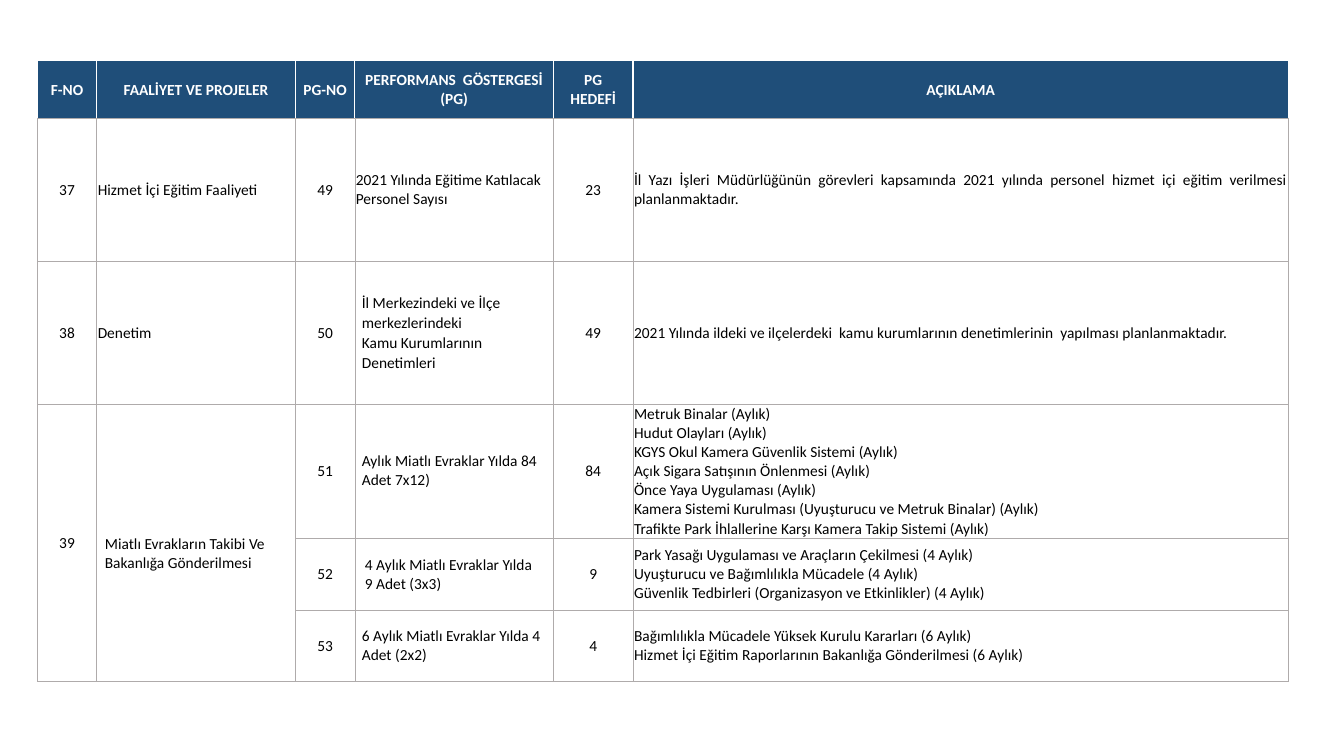
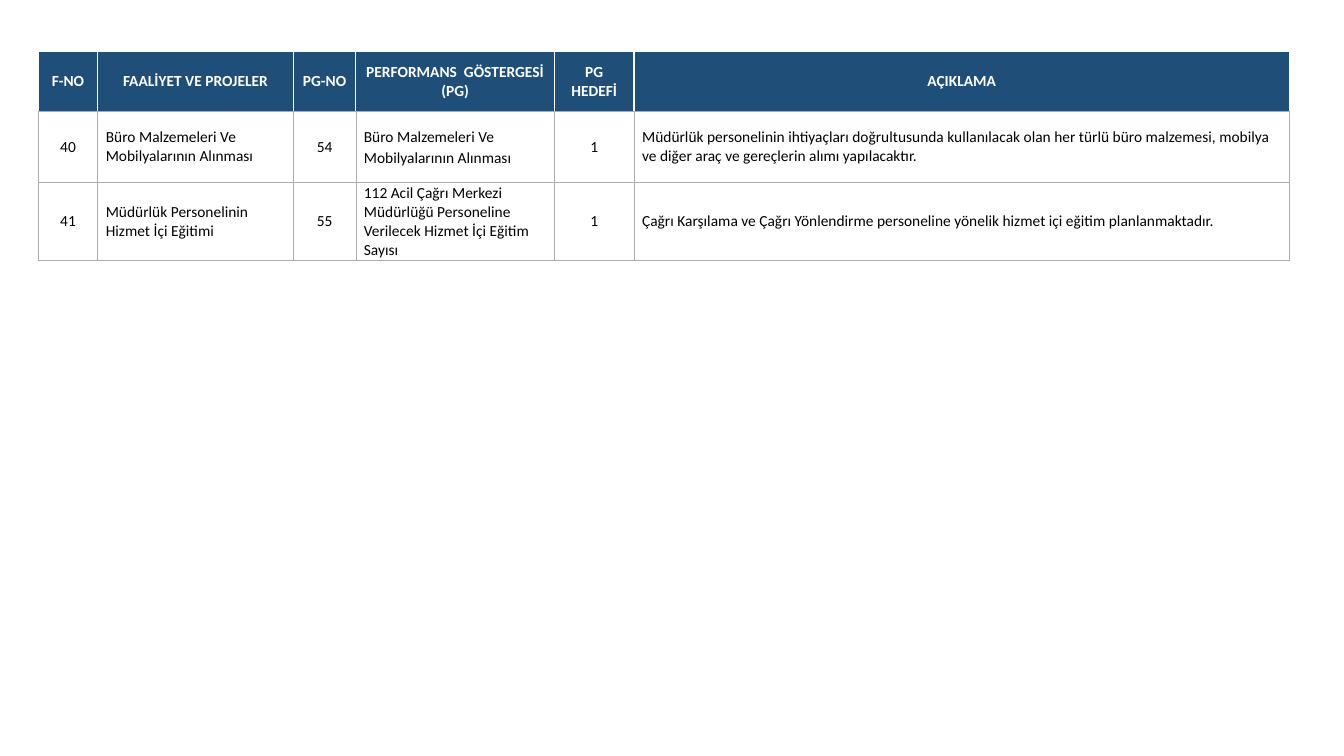
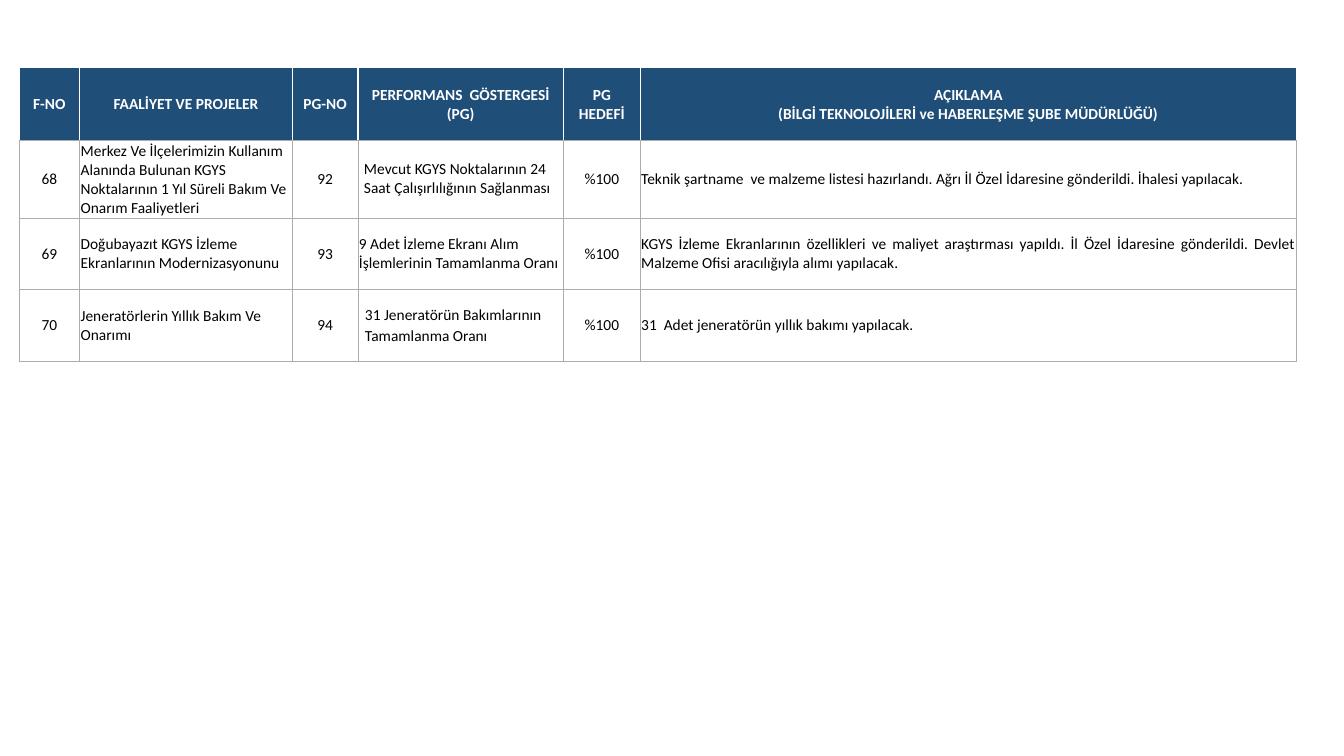
"""Build three slides of activity and performance indicator tables."""
import pptx
import pptx.dml.color
import pptx.enum.text
import pptx.util
from lxml import etree
from pptx.oxml.ns import qn

COLORS = {"header": "1F4E79", "white": "FFFFFF", "grid": "AFABAB", "text": "000000"}
FONT, SIZE = "Calibri", 11
ALIGN = {
    "c": pptx.enum.text.PP_ALIGN.CENTER,
    "l": pptx.enum.text.PP_ALIGN.LEFT,
    "j": pptx.enum.text.PP_ALIGN.JUSTIFY,
}
HEADINGS = ["F-NO", "FAALİYET VE PROJELER", "PG-NO", "PERFORMANS  GÖSTERGESİ (PG)",
            "PG\nHEDEFİ", "AÇIKLAMA"]
TIGHT = {"side": 0.01, "top": 0.01}
WIDE = {"side": 0.08}
INDENT = {"side": 0.07, "top": 0}

SLIDES = [
    {
        "at": (0.37, 0.6),
        "cols": [0.59, 1.97, 0.59, 1.97, 0.79, 6.5],
        "rows": [0.57, 1.42, 1.42, 1.33, 0.71, 0.71],
        "aligns": "clclcj",
        "merges": [(3, 0, 5, 0), (3, 1, 5, 1)],
        "body": [
            ["37", "Hizmet İçi Eğitim Faaliyeti", "49",
             "2021 Yılında Eğitime Katılacak Personel Sayısı", "23",
             "İl Yazı İşleri Müdürlüğünün görevleri kapsamında 2021 yılında personel "
             "hizmet içi eğitim verilmesi planlanmaktadır."],
            ["38", "Denetim", "50",
             ("İl Merkezindeki ve İlçe merkezlerindeki\nKamu Kurumlarının Denetimleri",
              {**INDENT, "spacing": 1.07}), "49",
             ("2021 Yılında ildeki ve ilçelerdeki  kamu kurumlarının denetimlerinin  "
              "yapılması planlanmaktadır.", {"spacing": 0.9})],
            ["39", ("Miatlı Evrakların Takibi Ve Bakanlığa Gönderilmesi",
                    {**WIDE, "top": 0.21}), "51",
             ("Aylık Miatlı Evraklar Yılda 84 Adet 7x12)", INDENT), "84",
             "Metruk Binalar (Aylık)\n"
             "Hudut Olayları (Aylık)\n"
             "KGYS Okul Kamera Güvenlik Sistemi (Aylık)\n"
             "Açık Sigara Satışının Önlenmesi (Aylık)\n"
             "Önce Yaya Uygulaması (Aylık)\n"
             "Kamera Sistemi Kurulması (Uyuşturucu ve Metruk Binalar) (Aylık)\n"
             "Trafikte Park İhlallerine Karşı Kamera Takip Sistemi (Aylık)"],
            [None, None, "52",
             ("4 Aylık Miatlı Evraklar Yılda 9 Adet (3x3)", {"side": 0.1}), "9",
             "Park Yasağı Uygulaması ve Araçların Çekilmesi (4 Aylık)\n"
             "Uyuşturucu ve Bağımlılıkla Mücadele (4 Aylık)\n"
             "Güvenlik Tedbirleri (Organizasyon ve Etkinlikler) (4 Aylık)"],
            [None, None, "53",
             ("6 Aylık Miatlı Evraklar Yılda 4 Adet (2x2)", INDENT), "4",
             "Bağımlılıkla Mücadele Yüksek Kurulu Kararları (6 Aylık)\n"
             "Hizmet İçi Eğitim Raporlarının Bakanlığa Gönderilmesi (6 Aylık)"],
        ],
    },
    {
        "at": (0.38, 0.51),
        "cols": [0.59, 1.94, 0.62, 1.97, 0.79, 6.5],
        "rows": [0.59, 0.71, 0.77],
        "aligns": "clclcl",
        "body_format": WIDE,
        "body": [
            [("40", TIGHT), "Büro Malzemeleri Ve Mobilyalarının Alınması", "54",
             ("Büro Malzemeleri Ve Mobilyalarının Alınması", {"spacing": 1.07}), "1",
             "Müdürlük personelinin ihtiyaçları doğrultusunda kullanılacak olan her türlü "
             "büro malzemesi, mobilya ve diğer araç ve gereçlerin alımı yapılacaktır."],
            [("41", TIGHT), "Müdürlük Personelinin Hizmet İçi Eğitimi", "55",
             "112 Acil Çağrı Merkezi Müdürlüğü Personeline Verilecek Hizmet İçi Eğitim Sayısı",
             "1",
             "Çağrı Karşılama ve Çağrı Yönlendirme personeline yönelik hizmet içi eğitim "
             "planlanmaktadır."],
        ],
    },
    {
        "at": (0.19, 0.67),
        "cols": [0.6, 2.11, 0.65, 2.04, 0.76, 6.51],
        "rows": [0.72, 0.77, 0.71, 0.71],
        "aligns": "clclcj",
        "heading_note": "\n(BİLGİ TEKNOLOJİLERİ ve HABERLEŞME ŞUBE MÜDÜRLÜĞÜ)",
        "body": [
            ["68", "Merkez Ve İlçelerimizin Kullanım Alanında Bulunan KGYS Noktalarının "
             "1 Yıl Süreli Bakım Ve Onarım Faaliyetleri", "92",
             ("Mevcut KGYS Noktalarının 24 Saat Çalışırlılığının Sağlanması",
              {"side": 0.06, "top": 0}), "%100",
             "Teknik şartname  ve malzeme listesi hazırlandı. Ağrı İl Özel İdaresine "
             "gönderildi. İhalesi yapılacak."],
            ["69", "Doğubayazıt KGYS İzleme Ekranlarının Modernizasyonunu", "93",
             "9 Adet İzleme Ekranı Alım İşlemlerinin Tamamlanma Oranı", "%100",
             "KGYS İzleme Ekranlarının özellikleri ve maliyet araştırması yapıldı. İl Özel "
             "İdaresine gönderildi. Devlet Malzeme Ofisi aracılığıyla alımı yapılacak."],
            ["70", "Jeneratörlerin Yıllık Bakım Ve Onarımı", "94",
             ("31 Jeneratörün Bakımlarının Tamamlanma Oranı", {**INDENT, "spacing": 1.07}),
             "%100", "31  Adet jeneratörün yıllık bakımı yapılacak."],
        ],
    },
]


def put_text(cell, text, align="l", color="text", bold=False, side=0.01, top=0.01, spacing=1.0):
    cell.margin_left = cell.margin_right = pptx.util.Inches(side)
    cell.margin_top, cell.margin_bottom = pptx.util.Inches(top), 0
    cell.vertical_anchor = pptx.enum.text.MSO_ANCHOR.MIDDLE
    tf = cell.text_frame
    for i, line in enumerate(text.split("\n")):
        p = tf.add_paragraph() if i else tf.paragraphs[0]
        p.alignment, p.line_spacing = ALIGN[align], spacing
        r = p.add_run()
        r.text = line
        r.font.name, r.font.size, r.font.bold = FONT, pptx.util.Pt(SIZE), bold
        r.font.color.rgb = pptx.dml.color.RGBColor.from_string(COLORS[color])


def set_borders(cell, borders):
    tcPr = cell._tc.get_or_add_tcPr()
    for side in "LRTB":
        color, width = borders[side]
        ln = etree.SubElement(tcPr, qn("a:ln" + side), w=str(int(pptx.util.Pt(width))))
        fill = etree.SubElement(ln, qn("a:solidFill"))
        etree.SubElement(fill, qn("a:srgbClr"), val=COLORS[color])


def style_cell(cell, row, col, last_col):
    if row == 0:
        set_borders(cell, {**dict.fromkeys("LRT", ("white", 1)), "B": ("grid", 0.25)})
        cell.fill.solid()
        cell.fill.fore_color.rgb = pptx.dml.color.RGBColor.from_string(COLORS["header"])
    else:
        set_borders(cell, {
            "L": ("grid", 0.25 if col == 0 else 0.5),
            "R": ("grid", 0.25 if col == last_col else 0.5),
            "T": ("grid", 0.25),
            "B": ("grid", 0.25),
        })
        cell.fill.background()


def add_indicator_table(slide, content):
    cols, rows = content["cols"], content["rows"]
    box = [pptx.util.Inches(v) for v in (*content["at"], sum(cols), sum(rows))]
    table = slide.shapes.add_table(len(rows), len(cols), *box).table
    table.horz_banding = False
    for column, width in zip(table.columns, cols):
        column.width = pptx.util.Inches(width)
    for row, height in zip(table.rows, rows):
        row.height = pptx.util.Inches(height)

    headings = HEADINGS[:-1] + [HEADINGS[-1] + content.get("heading_note", "")]
    for i, texts in enumerate([headings] + content["body"]):
        for j, entry in enumerate(texts):
            cell = table.cell(i, j)
            style_cell(cell, i, j, len(cols) - 1)
            if entry is None:
                continue
            if i == 0:
                put_text(cell, entry, align="c", color="white", bold=True)
                continue
            text, extra = entry if isinstance(entry, tuple) else (entry, {})
            put_text(cell, text, align=content["aligns"][j],
                     **{**content.get("body_format", {}), **extra})
    for top, left, bottom, right in content.get("merges", []):
        table.cell(top, left).merge(table.cell(bottom, right))


def main():
    prs = pptx.Presentation()
    prs.slide_width, prs.slide_height = pptx.util.Inches(13.33), pptx.util.Inches(7.5)
    for content in SLIDES:
        add_indicator_table(prs.slides.add_slide(prs.slide_layouts[6]), content)
    prs.save("out.pptx")


if __name__ == "__main__":
    main()
